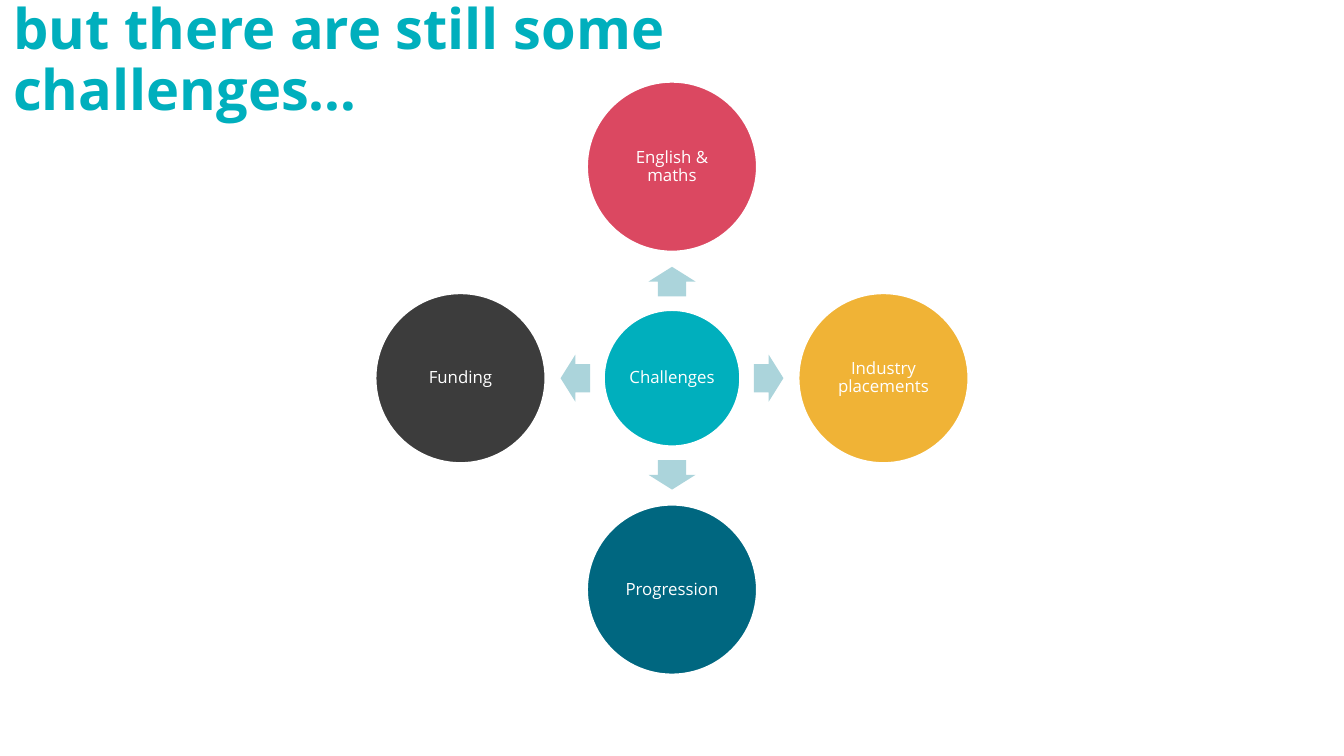
"""Build a slide with four challenges arranged around a central circle."""
import math

from pptx import Presentation
from pptx.dml.color import RGBColor
from pptx.enum.shapes import MSO_SHAPE
from pptx.enum.text import MSO_ANCHOR, PP_ALIGN
from pptx.util import Pt

OVAL = MSO_SHAPE.OVAL
RIGHT_ARROW = MSO_SHAPE.RIGHT_ARROW
MIDDLE = MSO_ANCHOR.MIDDLE
CENTER = PP_ALIGN.CENTER

FONT = "Open Sans"
TEAL, WHITE, PALE = "00AFBD", "FFFFFF", "ABD4DB"
HUB_X, HUB_Y = 360, 202.6
HUB_SIZE, CIRCLE_SIZE = 74, 92
CIRCLE_DISTANCE, ARROW_DISTANCE = 113.3, 51.8
ARROW_WIDTH, ARROW_HEIGHT = 15.8, 25.2
CHALLENGES = [
    ("English & maths", "DB4861", 270),
    ("Industry placements", "F0B336", 0),
    ("Progression", "006780", 90),
    ("Funding", "3C3C3C", 180),
]


def color(value):
    return RGBColor.from_string(value)


def add_centered(kind, x, y, width, height, fill):
    shape = page.shapes.add_shape(
        kind, Pt(x - width / 2), Pt(y - height / 2), Pt(width), Pt(height)
    )
    shape.shadow.inherit = False
    shape.fill.solid()
    shape.fill.fore_color.rgb = color(fill)
    shape.line.fill.background()
    return shape


deck = Presentation()
deck.slide_width, deck.slide_height = Pt(720), Pt(405)
page = deck.slides.add_slide(deck.slide_layouts[6])

title = page.shapes.add_textbox(Pt(0), Pt(-8.6), Pt(448.5), Pt(83.5))
title.text_frame.word_wrap = True
title.text_frame.vertical_anchor = MIDDLE
para = title.text_frame.paragraphs[0]
para.text = "but there are still some challenges…"
para.line_spacing = 0.9
para.font.name = FONT
para.font.size = Pt(30)
para.font.bold = True
para.font.color.rgb = color(TEAL)

circles = [("Challenges", TEAL, HUB_X, HUB_Y, HUB_SIZE)]
for label, fill, angle in CHALLENGES:
    across, down = math.cos(math.radians(angle)), math.sin(math.radians(angle))
    circles.append((
        label,
        fill,
        HUB_X + CIRCLE_DISTANCE * across,
        HUB_Y + CIRCLE_DISTANCE * down,
        CIRCLE_SIZE,
    ))
    arrow = add_centered(
        RIGHT_ARROW,
        HUB_X + ARROW_DISTANCE * across,
        HUB_Y + ARROW_DISTANCE * down,
        ARROW_WIDTH,
        ARROW_HEIGHT,
        PALE,
    )
    arrow.adjustments[0] = 0.6
    arrow.adjustments[1] = 0.5
    arrow.rotation = angle

for label, fill, x, y, size in circles:
    circle = add_centered(OVAL, x, y, size, size, fill)
    circle.line.color.rgb = color(WHITE)
    circle.line.width = Pt(2)
    frame = circle.text_frame
    frame.word_wrap = True
    frame.vertical_anchor = MIDDLE
    frame.margin_left = frame.margin_right = Pt(0.7)
    frame.margin_top = frame.margin_bottom = Pt(0.7)
    para = frame.paragraphs[0]
    para.text = label
    para.alignment = CENTER
    para.line_spacing = 0.9
    para.font.name = FONT
    para.font.size = Pt(9)
    para.font.color.rgb = color(WHITE)

deck.save("out.pptx")
